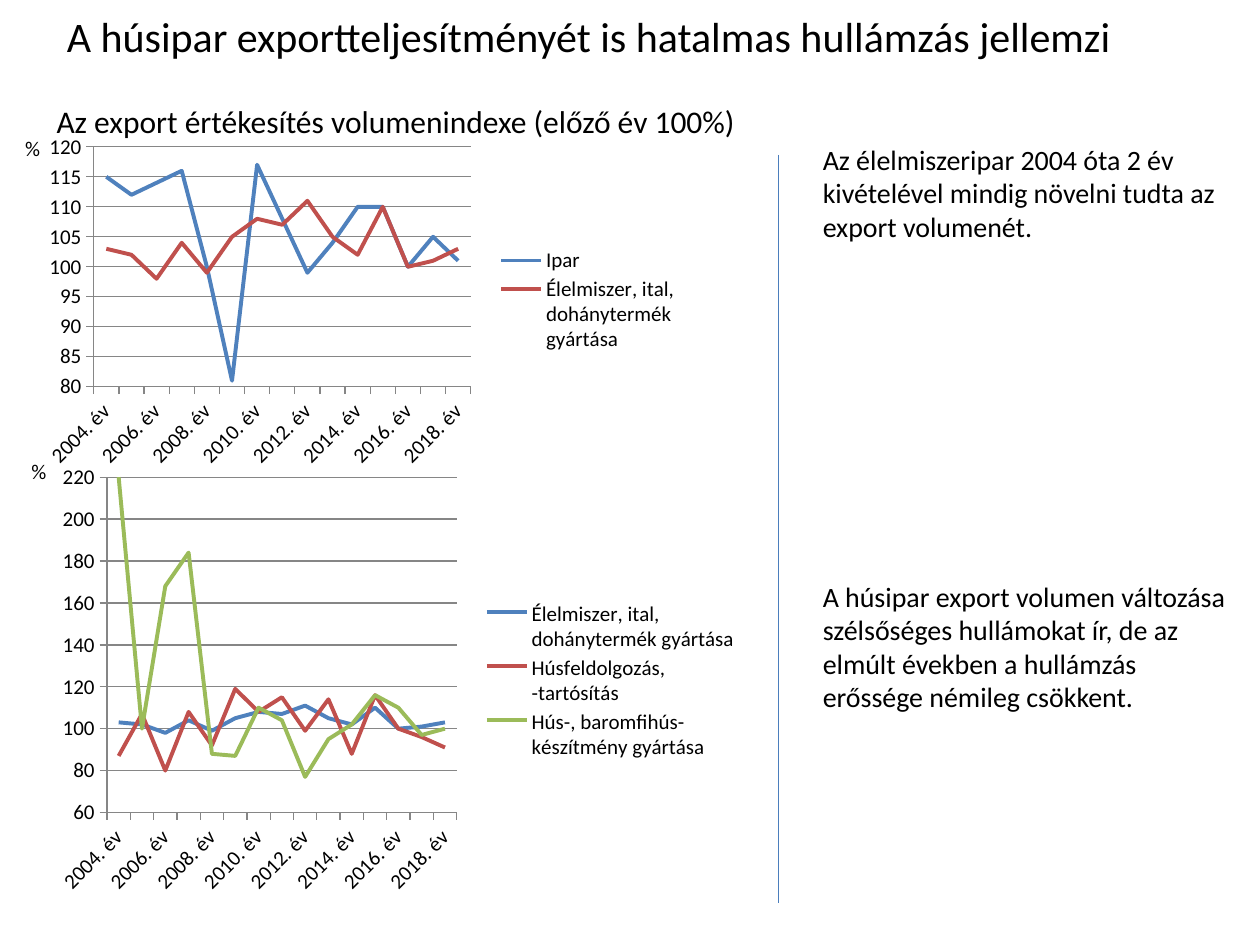
from lxml import etree
from pptx import Presentation
from pptx.chart.data import CategoryChartData
from pptx.dml.color import RGBColor
from pptx.enum.chart import XL_CHART_TYPE, XL_LEGEND_POSITION, XL_TICK_MARK
from pptx.enum.shapes import MSO_CONNECTOR
from pptx.enum.text import MSO_ANCHOR, MSO_AUTO_SIZE, PP_ALIGN
from pptx.oxml.ns import qn
from pptx.util import Inches, Pt

LINE_CHART = XL_CHART_TYPE.LINE
LEGEND_RIGHT = XL_LEGEND_POSITION.RIGHT
TICK_OUTSIDE = XL_TICK_MARK.OUTSIDE
STRAIGHT = MSO_CONNECTOR.STRAIGHT
MIDDLE, TOP = MSO_ANCHOR.MIDDLE, MSO_ANCHOR.TOP
LEFT = PP_ALIGN.LEFT
NO_AUTOFIT = MSO_AUTO_SIZE.NONE

FONT = "Calibri"
BLACK, GRID, DIVIDER = "000000", "868686", "4B7EBC"
SERIES_COLORS = ["4F81BD", "C0504D", "9BBB59"]
YEARS = [f"{year}. év" for year in range(2004, 2019)]
FOOD = ("Élelmiszer, ital, dohánytermék gyártása",
        [103, 102, 98, 104, 99, 105, 108, 107, 111, 105, 102, 110, 100, 101, 103])
INDUSTRY = ("Ipar", [115, 112, 114, 116, 100, 81, 117, 108, 99, 104, 110, 110, 100, 105, 101])
MEAT = ("Húsfeldolgozás, -tartósítás",
        [87, 107, 80, 108, 92, 119, 108, 115, 99, 114, 88, 116, 100, 96, 91])
MEAT_PRODUCTS = ("Hús-, baromfihús-készítmény gyártása",
                 [220, 100, 168, 184, 88, 87, 110, 104, 77, 95, 102, 116, 110, 97, 100])


def color(value):
    """Turn a hex string into a colour."""
    return RGBColor.from_string(value)


def inches(box):
    """Convert a sequence of inch values to lengths."""
    return [Inches(length) for length in box]


def style_font(font, size):
    """Apply the slide's typeface in black at the given size."""
    font.name = FONT
    font.size = Pt(size)
    font.color.rgb = color(BLACK)


def fill_frame(frame, paragraphs, size, anchor=TOP, wrap=True):
    """Write left-aligned paragraphs into a text frame."""
    frame.text = "\n".join(paragraphs)
    frame.auto_size = NO_AUTOFIT
    frame.word_wrap = wrap
    frame.vertical_anchor = anchor
    for paragraph in frame.paragraphs:
        paragraph.alignment = LEFT
        paragraph.space_before = Pt(0)
        for run in paragraph.runs:
            style_font(run.font, size)


def place(shape, box):
    """Move and size a placeholder."""
    shape.left, shape.top, shape.width, shape.height = inches(box)


def add_title(slide, text):
    """Fill the title placeholder."""
    place(slide.shapes.title, (0.43, 0.05, 9.51, 0.47))
    fill_frame(slide.shapes.title.text_frame, [text], 24, MIDDLE)


def add_comments(slide, comments, gap):
    """Fill the body placeholder with unbulleted comments set apart by a gap."""
    body = slide.placeholders[1]
    place(body, (6.43, 1.08, 3.52, 4.68))
    fill_frame(body.text_frame, comments, 16)
    for paragraph in body.text_frame.paragraphs:
        properties = paragraph._p.get_or_add_pPr()
        properties.set("marL", "0")
        properties.set("indent", "0")
        etree.SubElement(properties, qn("a:buNone"))
    body.text_frame.paragraphs[-1].space_before = Pt(gap)


def add_label(slide, text, box, size, wrap=True):
    """Add a text box."""
    label = slide.shapes.add_textbox(*inches(box))
    fill_frame(label.text_frame, [text], size, wrap=wrap)
    return label


def add_divider(slide, x, top, bottom):
    """Draw the vertical rule between charts and comments."""
    divider = slide.shapes.add_connector(STRAIGHT, *inches((x, top, x, bottom)))
    divider.line.color.rgb = color(DIVIDER)
    divider.line.width = Pt(0.75)
    etree.SubElement(divider._element.spPr, qn("a:effectLst"))


def set_layout(parent, index, shares, inner=False):
    """Fix a chart part at shares of the chart's width and height."""
    for old in parent.findall(qn("c:layout")):
        parent.remove(old)
    layout = etree.Element(qn("c:layout"))
    manual = etree.SubElement(layout, qn("c:manualLayout"))
    settings = [("layoutTarget", "inner")] if inner else []
    settings += [("xMode", "edge"), ("yMode", "edge")]
    settings += zip("xywh", map(str, shares))
    for name, value in settings:
        etree.SubElement(manual, qn(f"c:{name}")).set("val", value)
    parent.insert(index, layout)


def style_axis(axis):
    """Give an axis its line, ticks and label font."""
    axis.format.line.color.rgb = color(GRID)
    axis.format.line.width = Pt(0.75)
    axis.major_tick_mark = TICK_OUTSIDE
    style_font(axis.tick_labels.font, 12)


def slant_years(axis):
    """Turn the year labels and show every second one."""
    axis._element.find(qn("c:txPr")).find(qn("a:bodyPr")).set("rot", "-2700000")
    skip = etree.Element(qn("c:tickLblSkip"))
    skip.set("val", "2")
    axis._element.find(qn("c:noMultiLvlLbl")).addprevious(skip)


def add_index_chart(slide, box, series, scale, plot_shares, legend_shares):
    """Add a line chart of yearly indices; scale is minimum, maximum and step."""
    data = CategoryChartData(number_format="General")
    data.categories = YEARS
    for name, values in series:
        data.add_series(name, values)
    chart = slide.shapes.add_chart(LINE_CHART, *inches(box), data).chart
    chart.has_title = False
    style_font(chart.font, 18)
    chart.plots[0].vary_by_categories = False
    for line, line_color in zip(chart.series, SERIES_COLORS):
        line.smooth = False
        line.format.line.color.rgb = color(line_color)
        line.format.line.width = Pt(2.25)

    values_axis = chart.value_axis
    values_axis.minimum_scale, values_axis.maximum_scale, values_axis.major_unit = scale
    values_axis.major_gridlines.format.line.color.rgb = color(GRID)
    values_axis.major_gridlines.format.line.width = Pt(0.75)
    style_axis(values_axis)
    style_axis(chart.category_axis)
    slant_years(chart.category_axis)

    chart.has_legend = True
    chart.legend.position = LEGEND_RIGHT
    chart.legend.include_in_layout = False
    style_font(chart.legend.font, 12)
    set_layout(chart._chartSpace.chart.plotArea, 0, plot_shares, inner=True)
    set_layout(chart.legend._element, 1, legend_shares)


def main():
    """Build the slide on export volumes."""
    deck = Presentation()
    deck.slide_width, deck.slide_height = inches((10, 7.5))
    slide = deck.slides.add_slide(deck.slide_layouts[1])
    add_title(slide, "A húsipar exportteljesítményét is hatalmas hullámzás jellemzi")
    add_comments(slide, [
        "Az élelmiszeripar 2004 óta 2 év kivételével mindig növelni tudta az export volumenét.",
        "A húsipar export volumen változása szélsőséges hullámokat ír, de az elmúlt években "
        "a hullámzás erőssége némileg csökkent.",
    ], gap=192)
    add_divider(slide, 6.18, 1.23, 7.17)
    add_index_chart(slide, (0.28, 1, 5.16, 2.76), [INDUSTRY, FOOD], (80, 120, 5),
                    (0.09, 0.06, 0.58, 0.69), (0.7, 0.34, 0.3, 0.32))
    add_index_chart(slide, (0.35, 3.61, 5.55, 3.55), [FOOD, MEAT, MEAT_PRODUCTS], (60, 220, 20),
                    (0.09, 0.05, 0.5, 0.75), (0.62, 0.32, 0.38, 0.37))
    for left, top in [(0.15, 1.03), (0.2, 3.59)]:
        unit = add_label(slide, "%", (left, top, 0.16, 0.3), 12, wrap=False)
        unit.text_frame.margin_left = unit.text_frame.margin_right = Inches(0.05)
    add_label(slide, "Az export értékesítés volumenindexe (előző év 100%)",
              (0.35, 0.76, 6.08, 0.4), 18)
    deck.save("out.pptx")


if __name__ == "__main__":
    main()
